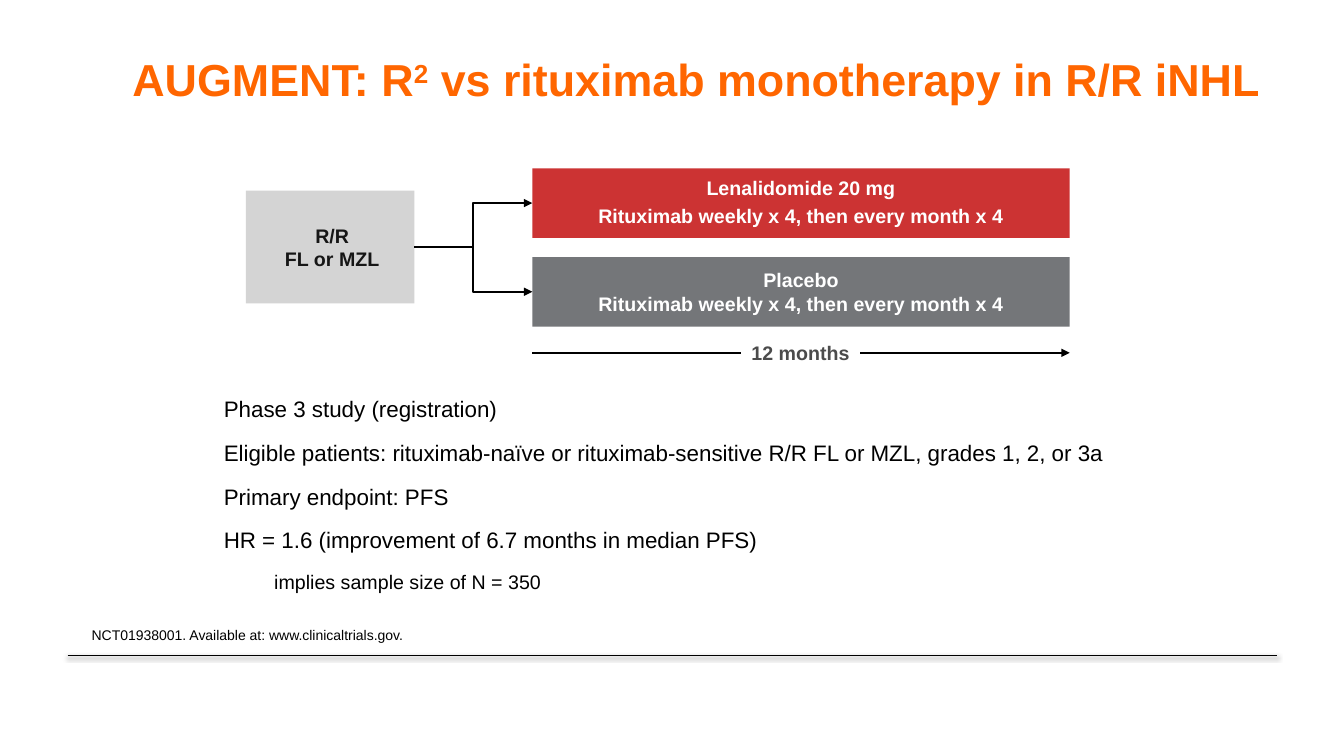
from dataclasses import dataclass

import pptx
import pptx.dml.color
import pptx.enum.shapes
import pptx.enum.text
import pptx.oxml
import pptx.oxml.ns
import pptx.util

Inches = pptx.util.Inches
Pt = pptx.util.Pt
Align = pptx.enum.text.PP_ALIGN
Anchor = pptx.enum.text.MSO_ANCHOR
Link = pptx.enum.shapes.MSO_CONNECTOR
NS = pptx.oxml.ns.nsdecls("a")


@dataclass(frozen=True)
class Theme:
    font: str = "Arial"
    orange: str = "FF6600"
    red: str = "CC3333"
    gray: str = "747679"
    pale: str = "D4D4D4"
    dark: str = "161616"
    slate: str = "4B4B4B"
    black: str = "000000"
    white: str = "FFFFFF"
    head: int = 32
    body: int = 16
    label: int = 14
    note: int = 10


THEME = Theme()


@dataclass(frozen=True)
class Box:
    lines: tuple
    left: float
    top: float
    width: float
    height: float
    fill: str
    color: str
    inset: tuple = (0.1, 0.05, 0.1, 0.05)
    spacing: float = 1.0
    after: float = 0
    wrap: bool = True


@dataclass(frozen=True)
class Line:
    text: str
    size: int = THEME.body
    indent: float = 0


START = Box(("R/R", "FL or MZL"), 2.44, 1.89, 1.67, 1.12,
            THEME.pale, THEME.dark, inset=(0.08, 0.12, 0.04, 0.12))
DOSE = "Rituximab weekly x 4, then every month x 4"
ARMS = (
    Box(("Lenalidomide 20 mg", DOSE), 5.28, 1.67, 5.33, 0.69,
        THEME.red, THEME.white, inset=(0, 0.05, 0, 0.05), spacing=0.9, after=5),
    Box(("Placebo", DOSE), 5.28, 2.55, 5.33, 0.69, THEME.gray, THEME.white),
)
SPAN = Box(("12 months",), 7.35, 3.33, 1.18, 0.34,
           THEME.white, THEME.slate, wrap=False)
FACTS = (
    Line("Phase 3 study (registration)"),
    Line("Eligible patients: rituximab-naïve or rituximab-sensitive "
         "R/R FL or MZL, grades 1, 2, or 3a"),
    Line("Primary endpoint: PFS"),
    Line("HR = 1.6 (improvement of 6.7 months in median PFS)"),
    Line("implies sample size of N = 350", THEME.label, 0.5),
)


def rgb(code: str):
    return pptx.dml.color.RGBColor.from_string(code)


def write(para, text: str, *, size: int, color: str = THEME.black,
          bold: bool = False, align=Align.LEFT, spacing: float = 1.0,
          before: float = 0, after: float = 0, indent: float = 0,
          raised: bool = False) -> None:
    """Add one run to a paragraph and format both."""
    props = para._p.get_or_add_pPr()
    props.set("marL", str(Inches(indent)))
    props.set("indent", "0")
    para.alignment = align
    para.line_spacing = spacing
    para.space_before, para.space_after = Pt(before), Pt(after)
    run = para.add_run()
    run.text = text
    font = run.font
    font.name, font.size, font.bold = THEME.font, Pt(size), bold
    font.color.rgb = rgb(color)
    if raised:
        run._r.get_or_add_rPr().set("baseline", "30000")


def set_frame(frame, inset: tuple = (0, 0, 0, 0), anchor=Anchor.TOP,
              wrap: bool = True) -> None:
    frame.word_wrap = wrap
    frame.auto_size = pptx.enum.text.MSO_AUTO_SIZE.NONE
    frame.vertical_anchor = anchor
    (frame.margin_left, frame.margin_top,
     frame.margin_right, frame.margin_bottom) = map(Inches, inset)


def get_para(frame, index: int):
    return frame.add_paragraph() if index else frame.paragraphs[0]


def add_box(slide, box: Box):
    spot = map(Inches, (box.left, box.top, box.width, box.height))
    shape = slide.shapes.add_shape(
        pptx.enum.shapes.MSO_SHAPE.RECTANGLE, *spot)
    shape.shadow.inherit = False
    shape.fill.solid()
    shape.fill.fore_color.rgb = rgb(box.fill)
    shape.line.fill.background()
    frame = shape.text_frame
    set_frame(frame, box.inset, Anchor.MIDDLE, box.wrap)
    for index, text in enumerate(box.lines):
        write(get_para(frame, index), text, size=THEME.label, color=box.color,
              bold=True, align=Align.CENTER, spacing=box.spacing,
              after=box.after)
    return shape


def add_text(slide, lines: tuple, spot: tuple, anchor=Anchor.TOP) -> None:
    frame = slide.shapes.add_textbox(*map(Inches, spot)).text_frame
    set_frame(frame, anchor=anchor)
    for index, line in enumerate(lines):
        write(get_para(frame, index), line.text, size=line.size,
              before=12 if index else 0, indent=line.indent)


def add_line(slide, kind, ends: tuple, *, width: float = 1.5,
             arrow: bool = True, shade: str = ""):
    """Draw a connector; shade is the XML inside its effect list."""
    line = slide.shapes.add_connector(kind, *map(Inches, ends))
    line.line.color.rgb = rgb(THEME.black)
    line.line.width = Pt(width)
    if arrow:
        line.line._get_or_add_ln().append(
            pptx.oxml.parse_xml(f'<a:tailEnd {NS} type="triangle"/>'))
    line._element.spPr.append(
        pptx.oxml.parse_xml(f"<a:effectLst {NS}>{shade}</a:effectLst>"))
    return line


def add_title(slide) -> None:
    title = slide.shapes.title
    title.left, title.top = Inches(0.91), Inches(0.34)
    title.width, title.height = Inches(12), Inches(0.71)
    set_frame(title.text_frame, anchor=Anchor.BOTTOM)
    for text, raised in (("AUGMENT: R", False), ("2", True),
                         (" vs rituximab monotherapy in R/R iNHL", False)):
        write(title.text_frame.paragraphs[0], text, size=THEME.head,
              color=THEME.orange, bold=True, align=Align.CENTER, raised=raised)


def add_design(slide) -> None:
    """Draw the start box, both arms and the time span."""
    start = add_box(slide, START)
    for arm in ARMS:
        shape = add_box(slide, arm)
        link = add_line(slide, Link.ELBOW, (
            START.left + START.width, START.top + START.height / 2,
            arm.left, arm.top + arm.height / 2))
        link.begin_connect(start, 3)
        link.end_connect(shape, 1)
    arm = ARMS[0]
    level = SPAN.top + SPAN.height / 2
    add_line(slide, Link.STRAIGHT,
             (arm.left, level, arm.left + arm.width, level))
    add_box(slide, SPAN)


def main() -> None:
    deck = pptx.Presentation()
    deck.slide_width, deck.slide_height = Inches(13.33), Inches(7.5)
    slide = deck.slides.add_slide(deck.slide_layouts.get_by_name("Title Only"))
    shade = (f'<a:outerShdw blurRad="{Pt(3.1)}" dist="{Pt(1.6)}" dir="5400000"'
             f' rotWithShape="0"><a:srgbClr val="{THEME.black}">'
             '<a:alpha val="38000"/></a:srgbClr></a:outerShdw>')
    add_line(slide, Link.STRAIGHT, (0.67, 6.5, 12.67, 6.5),
             width=0.5, arrow=False, shade=shade)
    add_title(slide)
    source = Line("NCT01938001. Available at: www.clinicaltrials.gov.",
                  THEME.note)
    add_text(slide, (source,), (0.91, 6.22, 9, 0.27))
    add_text(slide, FACTS, (2.22, 3.6, 9.2, 2.61), Anchor.MIDDLE)
    add_design(slide)
    deck.save("out.pptx")


if __name__ == "__main__":
    main()
